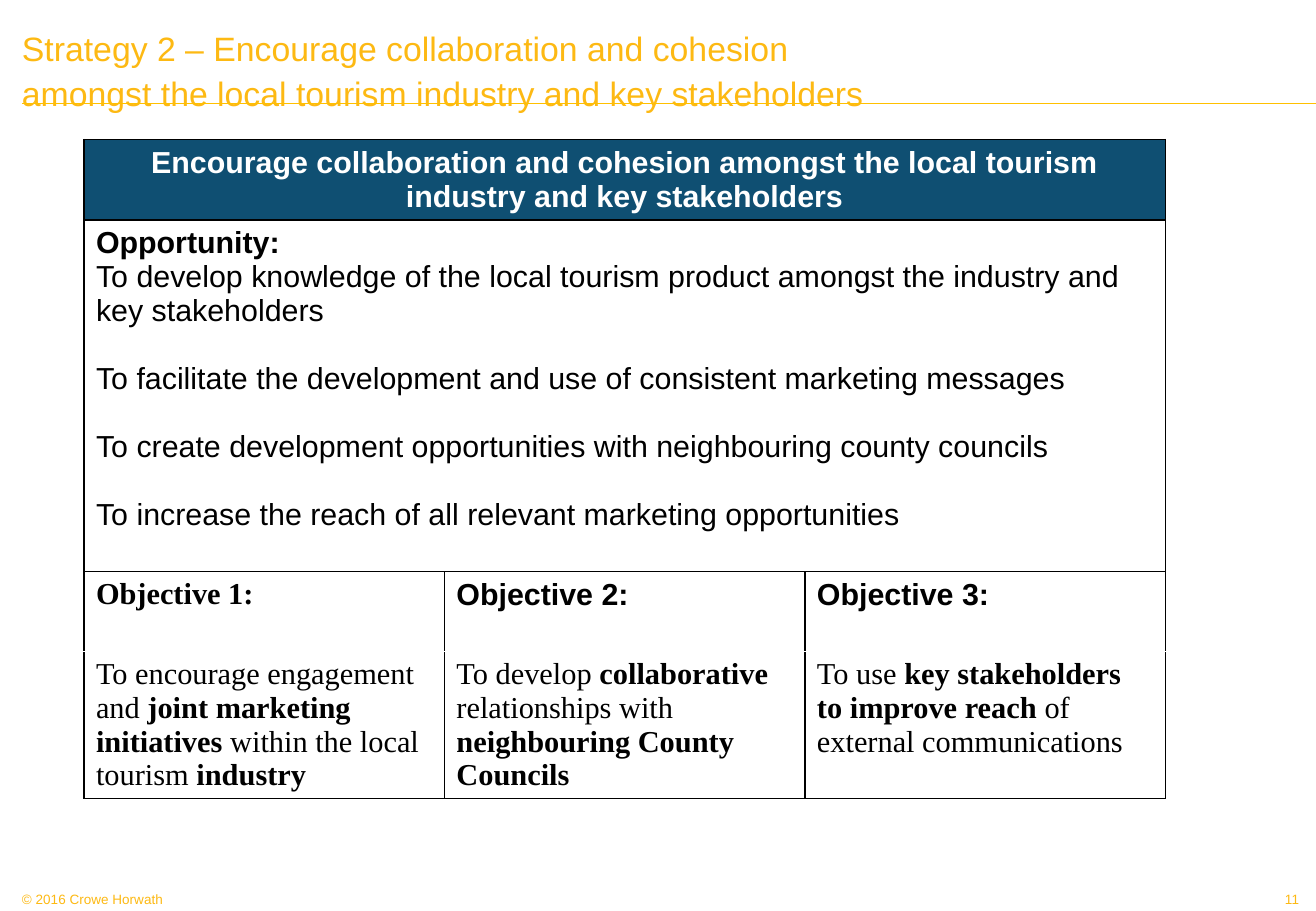
from lxml import etree
from pptx import Presentation
from pptx.dml.color import RGBColor
from pptx.enum.shapes import MSO_CONNECTOR
from pptx.enum.text import MSO_ANCHOR, MSO_AUTO_SIZE, PP_ALIGN
from pptx.oxml.ns import qn
from pptx.util import Pt

GOLD = RGBColor(0xFD, 0xB9, 0x13)
AMBER = RGBColor(0xFF, 0xC0, 0x00)
NAVY = RGBColor(0x0F, 0x4F, 0x72)
BLACK = RGBColor(0, 0, 0)
WHITE = RGBColor(0xFF, 0xFF, 0xFF)
SANS, SERIF = "Arial", "Times New Roman"
SLIDE_W, SLIDE_H = 779.76, 540
MARGIN = 13

TITLE = ("Strategy 2 – Encourage collaboration and cohesion "
         "amongst the local tourism industry and key stakeholders")
HEADING = ("Encourage collaboration and cohesion amongst the local tourism "
           "industry and key stakeholders")
OPPORTUNITIES = [
    "To develop knowledge of the local tourism product amongst the industry and key stakeholders",
    "To facilitate the development and use of consistent marketing messages",
    "To create development opportunities with neighbouring county councils",
    "To increase the reach of all relevant marketing opportunities",
]
# Objective: label, label font, (text, bold) runs
OBJECTIVES = [
    ("Objective 1:", SERIF, [("To encourage engagement and ", False),
                             ("joint marketing initiatives", True),
                             (" within the local tourism ", False),
                             ("industry", True)]),
    ("Objective 2:", SANS, [("To develop ", False), ("collaborative", True),
                            (" relationships with ", False),
                            ("neighbouring County Councils", True)]),
    ("Objective 3:", SANS, [("To use ", False),
                            ("key stakeholders to improve reach ", True),
                            ("of external communications", False)]),
]
ROW_HEIGHTS = [47.4, 208.6, 47.4, 86.6]


def set_font(p, size, color, name=SANS, bold=False):
    p.font.size, p.font.name, p.font.bold = Pt(size), name, bold
    p.font.color.rgb = color


def set_borders(cell, top=BLACK, bottom=BLACK):
    tc_pr = cell._tc.get_or_add_tcPr()
    sides = [("a:lnL", BLACK), ("a:lnR", BLACK), ("a:lnT", top), ("a:lnB", bottom)]
    for i, (tag, color) in enumerate(sides):
        ln = etree.Element(qn(tag), w=str(Pt(1)))
        fill = etree.SubElement(ln, qn("a:solidFill"))
        etree.SubElement(fill, qn("a:srgbClr"), val=str(color))
        tc_pr.insert(i, ln)


def add_header(slide, x, y, w, h):
    # Rule under the title
    rule = slide.shapes.add_connector(
        MSO_CONNECTOR.STRAIGHT, Pt(x), Pt(61.2), Pt(SLIDE_W), Pt(61.2))
    rule.line.color.rgb, rule.line.width = AMBER, Pt(0.75)
    etree.SubElement(rule._element.spPr, qn("a:effectLst"))

    # Title
    sp = slide.shapes.title
    sp.left, sp.top, sp.width, sp.height = Pt(x), Pt(y), Pt(w), Pt(h)
    tf = sp.text_frame
    tf.margin_left = tf.margin_right = tf.margin_top = tf.margin_bottom = 0
    tf.auto_size, tf.word_wrap = MSO_AUTO_SIZE.NONE, True
    tf.vertical_anchor = MSO_ANCHOR.MIDDLE
    tf.text = TITLE
    p = tf.paragraphs[0]
    p.alignment, p.line_spacing = PP_ALIGN.LEFT, 1.1
    set_font(p, 20, GOLD)


def add_strategy_table(slide, x, y, w):
    table = slide.shapes.add_table(
        len(ROW_HEIGHTS), len(OBJECTIVES),
        Pt(x), Pt(y), Pt(w), Pt(sum(ROW_HEIGHTS))).table
    table.first_row = table.horz_banding = False
    for row, height in zip(table.rows, ROW_HEIGHTS):
        row.height = Pt(height)
    for r, row in enumerate(table.rows):
        for cell in row.cells:
            set_borders(cell, top=WHITE if r == 3 else BLACK,
                        bottom=WHITE if r == 2 else BLACK)
            cell.fill.solid()
            cell.fill.fore_color.rgb = NAVY if r == 0 else WHITE
    for r in (0, 1):
        table.cell(r, 0).merge(table.cell(r, len(OBJECTIVES) - 1))

    # Heading
    heading = table.cell(0, 0)
    heading.text = HEADING
    p = heading.text_frame.paragraphs[0]
    p.alignment = PP_ALIGN.CENTER
    set_font(p, 18, WHITE, bold=True)

    # Opportunities
    tf = table.cell(1, 0).text_frame
    tf.text = "Opportunity:"
    set_font(tf.paragraphs[0], 18, BLACK, bold=True)
    for i, text in enumerate(OPPORTUNITIES):
        p = tf.add_paragraph()
        p.text = text
        p.space_before = Pt(20.2 if i else 0)
        set_font(p, 18, BLACK)

    # Objectives
    for c, (label, font, runs) in enumerate(OBJECTIVES):
        table.cell(2, c).text = label
        set_font(table.cell(2, c).text_frame.paragraphs[0], 18, BLACK, font, True)
        p = table.cell(3, c).text_frame.paragraphs[0]
        set_font(p, 18, BLACK, SERIF)
        for text, bold in runs:
            r = p.add_run()
            r.text, r.font.bold = text, bold


def add_footer_text(slide, text, x, y, w, h, align):
    tf = slide.shapes.add_textbox(Pt(x), Pt(y), Pt(w), Pt(h)).text_frame
    tf.margin_left = tf.margin_right = 0
    tf.margin_top = tf.margin_bottom = Pt(1.4)
    tf.word_wrap = True
    tf.text = text
    p = tf.paragraphs[0]
    p.alignment = align
    set_font(p, 8, GOLD)


def main():
    prs = Presentation()
    prs.slide_width, prs.slide_height = Pt(SLIDE_W), Pt(SLIDE_H)
    slide = prs.slides.add_slide(prs.slide_layouts[5])
    add_header(slide, MARGIN, 13.7, 518.4, 54)
    add_strategy_table(slide, 49.7, 82.8, 640.8)
    add_footer_text(slide, "© 2016 Crowe Horwath", MARGIN, 527, 186.5, 12.2, PP_ALIGN.LEFT)
    add_footer_text(slide, "11", 737.3, 527, 32.4, 12.2, PP_ALIGN.RIGHT)
    prs.save("out.pptx")


if __name__ == "__main__":
    main()
